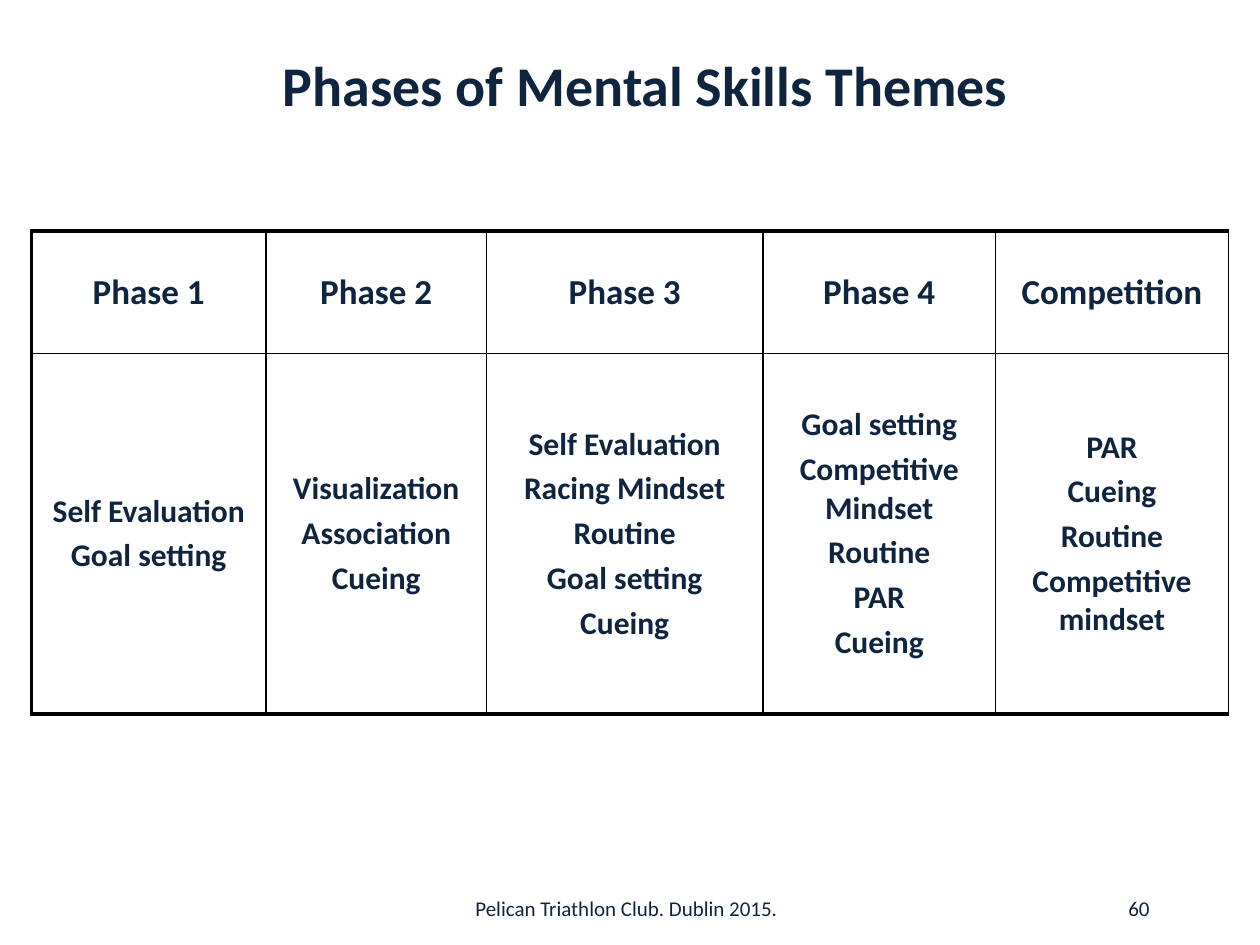
from lxml import etree
from pptx import Presentation
from pptx.dml.color import RGBColor
from pptx.enum import text
from pptx.oxml import ns
from pptx.util import Pt

NAVY = RGBColor(0x0F, 0x24, 0x3E)
BLACK = RGBColor(0, 0, 0)
CENTER, RIGHT = text.PP_ALIGN.CENTER, text.PP_ALIGN.RIGHT

# Content: each phase with its themes and column width
PHASES = [
    ("Phase 1", 134, ["Self Evaluation", "Goal setting"]),
    ("Phase 2", 126, ["Visualization", "Association", "Cueing"]),
    ("Phase 3", 158, ["Self Evaluation", "Racing Mindset", "Routine",
                      "Goal setting", "Cueing"]),
    ("Phase 4", 133, ["Goal setting", "Competitive Mindset", "Routine",
                      "PAR", "Cueing"]),
    ("Competition", 133, ["PAR", "Cueing", "Routine", "Competitive mindset"]),
]
# Text, box (left, top, width, height), size, bold, alignment
LABELS = [
    ("Phases of Mental Skills Themes", (60, 12, 618, 72), 32, True, CENTER),
    ("Pelican Triathlon Club. Dublin 2015.", (244, 501, 228, 36), 12, False, CENTER),
    ("60", (514, 501, 150, 36), 12, False, RIGHT),
]
TABLE_LEFT, TABLE_TOP = 18, 132
ROW_HEIGHTS = (70, 206)
ROW_SIZES = (20, 18)
THIN, THICK = 1, 2.25


def write(tf, lines, size, bold, align, gap=0):
    for i, line in enumerate(lines):
        p = tf.add_paragraph() if i else tf.paragraphs[0]
        p.alignment = align
        p.space_before = Pt(gap)
        r = p.add_run()
        r.text = line
        r.font.color.rgb = NAVY
        for name, value in {"name": "Calibri", "size": Pt(size), "bold": bold}.items():
            setattr(r.font, name, value)


def set_borders(cell, widths):
    tcPr = cell._tc.get_or_add_tcPr()
    for i, (side, width) in enumerate(widths.items()):
        ln = etree.Element(ns.qn("a:ln" + side), w=str(Pt(width)))
        fill = etree.SubElement(ln, ns.qn("a:solidFill"))
        etree.SubElement(fill, ns.qn("a:srgbClr"), val=str(BLACK))
        tcPr.insert(i, ln)


prs = Presentation()
prs.slide_width, prs.slide_height = Pt(720), Pt(540)
s = prs.slides.add_slide(prs.slide_layouts[6])

# Title and footer
for label, box, size, bold, align in LABELS:
    tf = s.shapes.add_textbox(*map(Pt, box)).text_frame
    tf.word_wrap = True
    tf.vertical_anchor = text.MSO_ANCHOR.MIDDLE
    write(tf, [label], size, bold, align)

# Table of phases
total_width = sum(width for _, width, _ in PHASES)
table = s.shapes.add_table(
    len(ROW_HEIGHTS), len(PHASES), Pt(TABLE_LEFT), Pt(TABLE_TOP),
    Pt(total_width), Pt(sum(ROW_HEIGHTS))).table
table.first_row = table.horz_banding = False
for row, height in zip(table.rows, ROW_HEIGHTS):
    row.height = Pt(height)
for c, (phase, width, themes) in enumerate(PHASES):
    table.columns[c].width = Pt(width)
    for r, (lines, size) in enumerate(zip(([phase], themes), ROW_SIZES)):
        cell = table.cell(r, c)
        cell.fill.background()
        cell.vertical_anchor = text.MSO_ANCHOR.MIDDLE
        write(cell.text_frame, lines, size, True, CENTER, gap=0.2 * size)
        set_borders(cell, {
            "L": THICK if c == 0 else THIN,
            "R": THIN,
            "T": THICK if r == 0 else THIN,
            "B": THICK if r == len(ROW_HEIGHTS) - 1 else THIN,
        })

prs.save("out.pptx")
